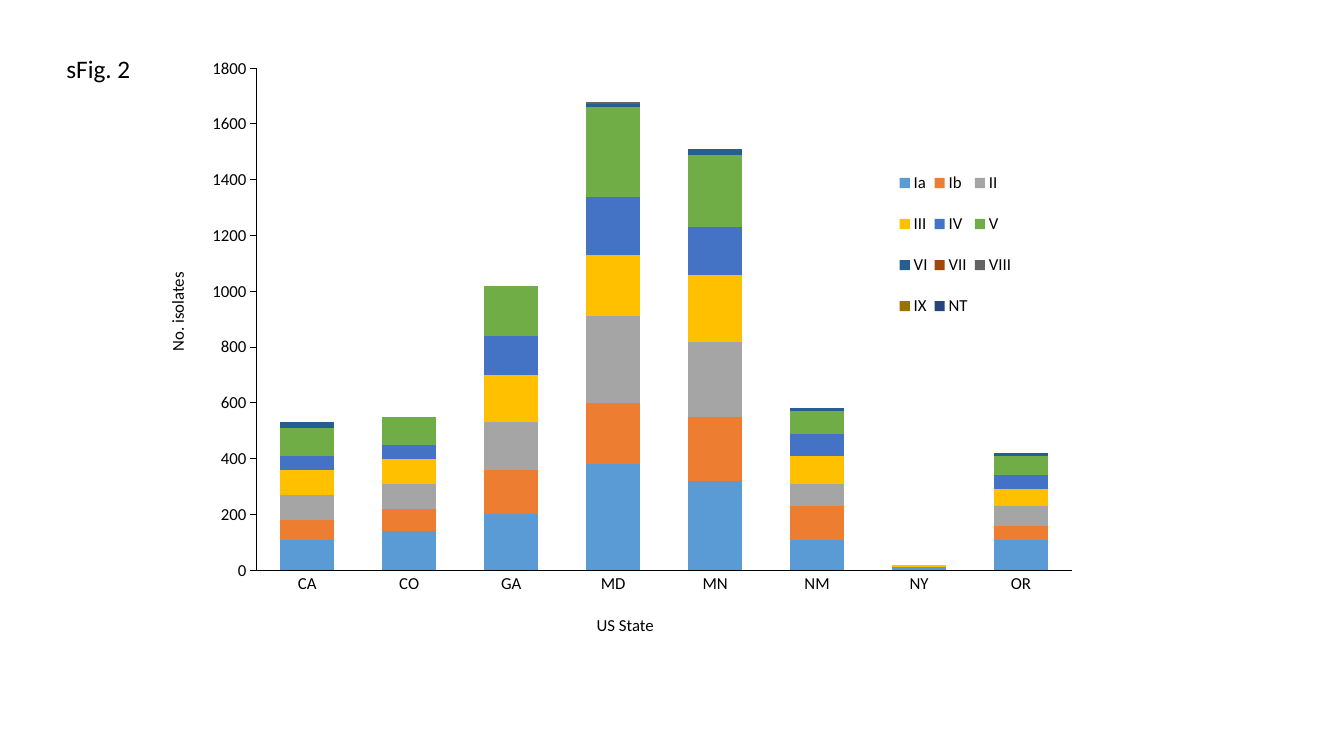
import pptx
import pptx.chart.data
import pptx.dml.color
import pptx.enum.chart
import pptx.enum.shapes
import pptx.enum.text
import pptx.oxml
import pptx.oxml.ns
import pptx.util
from dataclasses import dataclass

# Content
STATES = ["CA", "CO", "GA", "MD", "MN", "NM", "NY", "OR"]
ISOLATES = [  # serotype, colour, isolates per state
    ("Ia", "5B9BD5", (110, 140, 200, 380, 320, 110, 10, 110)),
    ("Ib", "ED7D31", (70, 80, 160, 220, 230, 120, 0, 50)),
    ("II", "A5A5A5", (90, 90, 170, 310, 270, 80, 0, 70)),
    ("III", "FFC000", (90, 90, 170, 220, 240, 100, 10, 60)),
    ("IV", "4472C4", (50, 50, 140, 210, 170, 80, 0, 50)),
    ("V", "70AD47", (100, 100, 180, 320, 260, 80, 0, 70)),
    ("VI", "255E91", (20, 0, 0, 10, 20, 10, 0, 10)),
    ("VII", "9E480E", (0, 0, 0, 0, 0, 0, 0, 0)),
    ("VIII", "636363", (0, 0, 0, 10, 0, 0, 0, 0)),
    ("IX", "997300", (0, 0, 0, 0, 0, 0, 0, 0)),
    ("NT", "264478", (0, 0, 0, 0, 0, 0, 0, 0)),
]
AXIS_LABELS = [  # text, left, top, width, height, rotation
    ("No. isolates", 0.85, 2.52, 1.81, 0.32, 270),
    ("US State", 5.82, 6.04, 2.35, 0.32, 0),
]
FIGURE_LABEL = ("sFig. 2", 0.56, 0.48, 0.84, 0.4)
CHART_BOX = (1.92, 0.44, 8.89, 5.93)

# Shares of the chart: left, top, width, height
PLOT_SHARE = (0.07, 0.04, 0.91, 0.84)
LEGEND_SHARE = (0.78, 0.18, 0.14, 0.31)


@dataclass(frozen=True)
class Theme:
    font: str = "Calibri"
    ink: str = "000000"
    paper: str = "FFFFFF"
    label_size: int = 12
    figure_size: int = 18


THEME = Theme()


def inches(lengths):
    return [pptx.util.Inches(length) for length in lengths]


def colour(code):
    return pptx.dml.color.RGBColor.from_string(code)


def set_all(target, values):
    for name, value in values.items():
        setattr(target, name, value)


def style_font(font, size):
    set_all(font, {"name": THEME.font, "size": pptx.util.Pt(size), "bold": False})
    font.color.rgb = colour(THEME.ink)


def place_part(part, index, shares, inner=False):
    """Give a chart part a fixed place within the chart."""
    for old in part.findall(pptx.oxml.ns.qn("c:layout")):
        part.remove(old)
    rules = [("layoutTarget", "inner")] if inner else []
    rules += [("xMode", "edge"), ("yMode", "edge"), *zip("xywh", shares)]
    body = "".join(f'<c:{name} val="{value}"/>' for name, value in rules)
    part.insert(index, pptx.oxml.parse_xml(
        f'<c:layout {pptx.oxml.ns.nsdecls("c")}>'
        f"<c:manualLayout>{body}</c:manualLayout></c:layout>"))


def add_isolate_chart(page):
    kinds = pptx.enum.chart
    data = pptx.chart.data.CategoryChartData()
    data.categories = STATES
    for serotype, _, counts in ISOLATES:
        data.add_series(serotype, counts)
    chart = page.shapes.add_chart(
        kinds.XL_CHART_TYPE.COLUMN_STACKED, *inches(CHART_BOX), data).chart
    set_all(chart, {"has_title": False, "has_legend": True})
    style_font(chart.font, THEME.label_size)

    # Columns
    plot = chart.plots[0]
    set_all(plot, {"gap_width": 90, "overlap": 100, "vary_by_categories": False})
    for series, (_, code, _) in zip(plot.series, ISOLATES):
        series.format.fill.solid()
        series.format.fill.fore_color.rgb = colour(code)

    # Axes
    set_all(chart.value_axis, {"minimum_scale": 0, "maximum_scale": 1800,
                               "major_unit": 200})
    ticks = kinds.XL_TICK_MARK
    for axis, tick in ((chart.category_axis, ticks.NONE),
                       (chart.value_axis, ticks.OUTSIDE)):
        set_all(axis, {"has_major_gridlines": False, "major_tick_mark": tick,
                       "minor_tick_mark": ticks.NONE})
        axis.format.line.width = pptx.util.Pt(0.75)
        axis.format.line.color.rgb = colour(THEME.ink)
        style_font(axis.tick_labels.font, THEME.label_size)

    # Legend and plot places
    set_all(chart.legend, {"position": kinds.XL_LEGEND_POSITION.BOTTOM,
                           "include_in_layout": False})
    style_font(chart.legend.font, THEME.label_size)
    body = chart.element.find(pptx.oxml.ns.qn("c:chart"))
    place_part(body.find(pptx.oxml.ns.qn("c:plotArea")), 0, PLOT_SHARE, inner=True)
    place_part(body.find(pptx.oxml.ns.qn("c:legend")), 1, LEGEND_SHARE)


def write(box, text, size, wrap, **spacing):
    set_all(box.text_frame, {"word_wrap": wrap,
                             "vertical_anchor": pptx.enum.text.MSO_ANCHOR.TOP})
    para = box.text_frame.paragraphs[0]
    set_all(para, {"alignment": pptx.enum.text.PP_ALIGN.LEFT, **spacing})
    span = para.add_run()
    span.text = text
    style_font(span.font, size)


def add_axis_label(page, text, left, top, width, height, rotation):
    box = page.shapes.add_shape(pptx.enum.shapes.MSO_SHAPE.RECTANGLE,
                                *inches((left, top, width, height)))
    box.rotation = rotation
    box.shadow.inherit = False
    box.fill.solid()
    box.fill.fore_color.rgb = colour(THEME.paper)
    box.line.fill.background()
    write(box, text, THEME.label_size, True,
          line_spacing=1.07, space_after=pptx.util.Pt(8))


def main():
    deck = pptx.Presentation()
    deck.slide_width, deck.slide_height = inches((13.33, 7.5))
    page = deck.slides.add_slide(deck.slide_layouts.get_by_name("Blank"))

    add_isolate_chart(page)
    for label in AXIS_LABELS:
        add_axis_label(page, *label)

    # Figure label
    text, *place = FIGURE_LABEL
    box = page.shapes.add_textbox(*inches(place))
    write(box, text, THEME.figure_size, False)
    box.text_frame.auto_size = pptx.enum.text.MSO_AUTO_SIZE.SHAPE_TO_FIT_TEXT

    deck.save("out.pptx")


if __name__ == "__main__":
    main()
